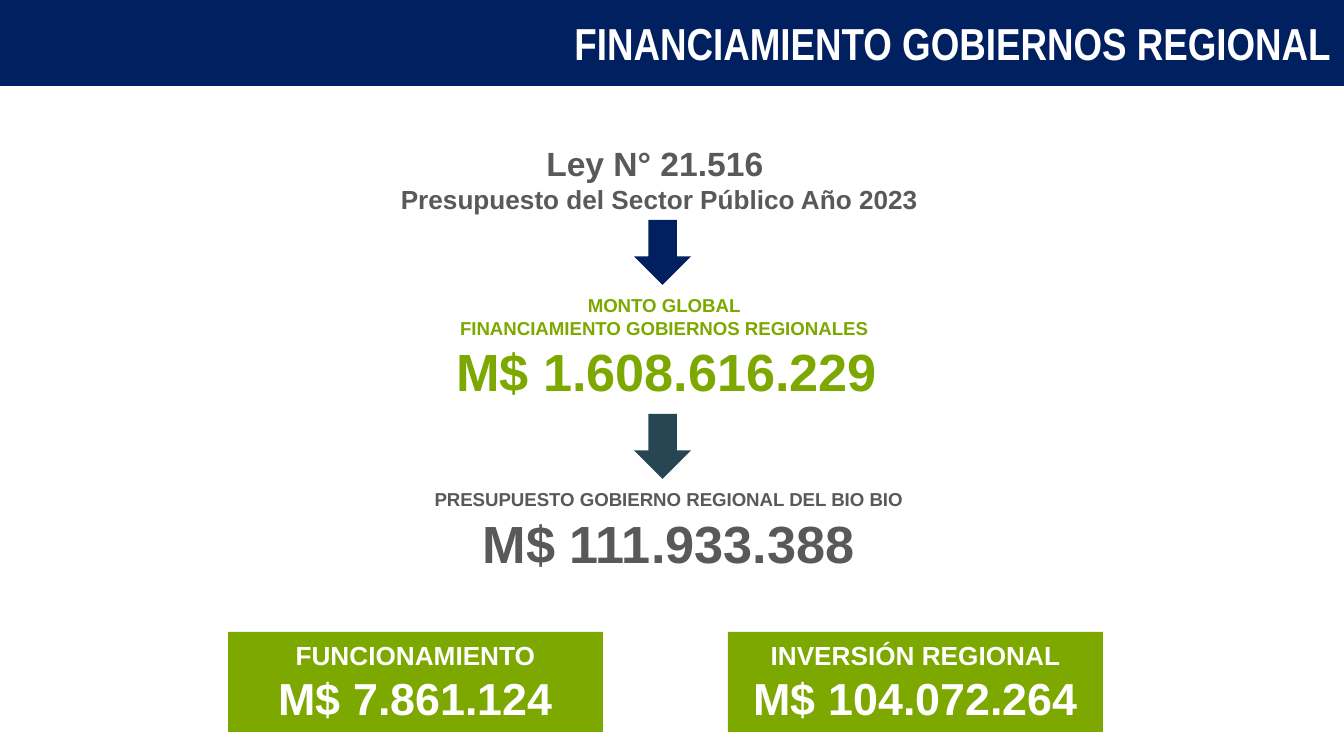
from dataclasses import dataclass

from pptx import Presentation
from pptx.dml.color import RGBColor
from pptx.enum.shapes import MSO_SHAPE
from pptx.enum.text import MSO_ANCHOR, MSO_AUTO_SIZE, PP_ALIGN
from pptx.util import Emu, Pt

EMU_PER_PX = 914400 / 134.4


@dataclass(frozen=True)
class Theme:
    navy: str = "002060"
    slate: str = "264653"
    green: str = "7CA800"
    gray: str = "595959"
    white: str = "FFFFFF"
    body_font: str = "Arial"
    title_font: str = "Arial Narrow"
    label: int = 10
    subheading: int = 14
    heading: int = 18
    amount: int = 24
    total: int = 28


@dataclass(frozen=True)
class Area:
    left: int
    top: int
    width: int
    height: int

    def emu(self) -> tuple:
        return tuple(px(n) for n in (self.left, self.top, self.width, self.height))


@dataclass(frozen=True)
class Line:
    text: str
    size: int


@dataclass(frozen=True)
class Statement:
    area: Area
    color: str
    lines: tuple


@dataclass(frozen=True)
class Arrow:
    top: int
    color: str


@dataclass(frozen=True)
class Card:
    left: int
    name: str
    amount: str


THEME = Theme()

STATEMENTS = (
    Statement(Area(372, 99, 575, 159), THEME.gray, (
        Line("Ley N° 21.516 ", THEME.heading),
        Line("Presupuesto del Sector Público Año 2023", THEME.subheading),
    )),
    Statement(Area(382, 290, 569, 116), THEME.green, (
        Line("MONTO GLOBAL ", THEME.label),
        Line("FINANCIAMIENTO GOBIERNOS REGIONALES ", THEME.label),
        Line("M$ 1.608.616.229", THEME.total),
    )),
    Statement(Area(384, 473, 569, 116), THEME.gray, (
        Line("PRESUPUESTO GOBIERNO REGIONAL DEL BIO BIO", THEME.label),
        Line("M$ 111.933.388", THEME.total),
    )),
)

ARROWS = (Arrow(224, THEME.navy), Arrow(418, THEME.slate))

CARDS = (
    Card(228, "FUNCIONAMIENTO", "M$ 7.861.124"),
    Card(728, "INVERSIÓN REGIONAL", "M$ 104.072.264"),
)


def px(length: int) -> Emu:
    return Emu(round(length * EMU_PER_PX))


def write_line(para, text: str, *, size: int, color: str,
               font: str = THEME.body_font, align=PP_ALIGN.CENTER) -> None:
    para.alignment = align
    span = para.add_run()
    span.text = text
    span.font.name = font
    span.font.size = Pt(size)
    span.font.bold = True
    span.font.color.rgb = RGBColor.from_string(color)


def prepare_frame(box, inset: int = 13):
    frame = box.text_frame
    frame.word_wrap = True
    frame.auto_size = MSO_AUTO_SIZE.NONE
    frame.vertical_anchor = MSO_ANCHOR.MIDDLE
    frame.margin_left = frame.margin_right = px(inset)
    frame.margin_top = frame.margin_bottom = px(inset)
    return frame


def write_lines(frame, lines: tuple, color: str) -> None:
    for index, line in enumerate(lines):
        para = frame.add_paragraph() if index else frame.paragraphs[0]
        write_line(para, line.text, size=line.size, color=color)


def paint(box, color: str) -> None:
    box.fill.solid()
    box.fill.fore_color.rgb = RGBColor.from_string(color)
    box.line.fill.background()


def add_filled_shape(page, kind, area: Area, color: str):
    box = page.shapes.add_shape(kind, *area.emu())
    box.shadow.inherit = False
    paint(box, color)
    return box


def draw_title(page, text: str) -> None:
    title = page.shapes.title
    title.left, title.top, title.width, title.height = Area(0, 0, 1344, 86).emu()
    paint(title, THEME.navy)
    frame = prepare_frame(title)
    write_line(frame.paragraphs[0], text, size=THEME.amount, color=THEME.white,
               font=THEME.title_font, align=PP_ALIGN.RIGHT)


def draw_statement(page, statement: Statement) -> None:
    box = page.shapes.add_textbox(*statement.area.emu())
    write_lines(prepare_frame(box), statement.lines, statement.color)


def draw_arrow(page, arrow: Arrow) -> None:
    area = Area(630, arrow.top, 65, 57)
    box = add_filled_shape(page, MSO_SHAPE.RIGHT_ARROW, area, arrow.color)
    box.rotation = 90


def draw_card(page, card: Card) -> None:
    area = Area(card.left, 632, 375, 100)
    box = add_filled_shape(page, MSO_SHAPE.RECTANGLE, area, THEME.green)
    lines = (Line(card.name, THEME.subheading), Line(card.amount, THEME.amount))
    write_lines(prepare_frame(box, inset=7), lines, THEME.white)


def main() -> None:
    deck = Presentation()
    deck.slide_width, deck.slide_height = px(1344), px(756)
    page = deck.slides.add_slide(deck.slide_layouts[5])
    draw_title(page, "FINANCIAMIENTO GOBIERNOS REGIONAL")
    for statement in STATEMENTS:
        draw_statement(page, statement)
    for arrow in ARROWS:
        draw_arrow(page, arrow)
    for card in CARDS:
        draw_card(page, card)
    deck.save("out.pptx")


if __name__ == "__main__":
    main()
